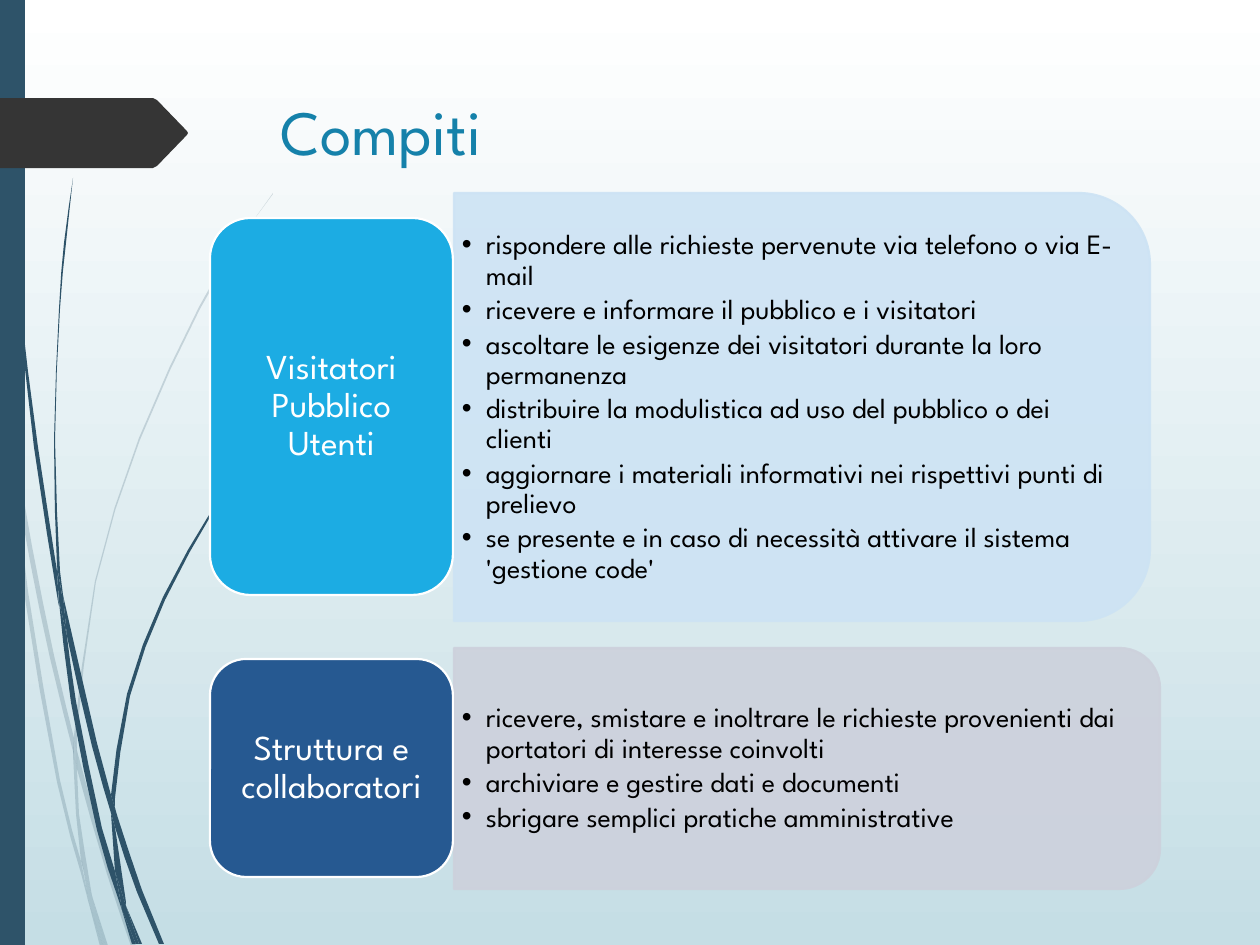
from math import dist

from lxml import etree
from pptx import Presentation
from pptx.dml.color import RGBColor
from pptx.enum.shapes import MSO_SHAPE
from pptx.enum.text import MSO_ANCHOR, PP_ALIGN
from pptx.oxml.ns import qn
from pptx.util import Emu, Pt

PX = 914400 // 126
FONT = "League Spartan"
RECT, CARD, PANEL = (MSO_SHAPE.RECTANGLE, MSO_SHAPE.ROUNDED_RECTANGLE,
                     MSO_SHAPE.ROUND_2_SAME_RECTANGLE)
COLORS = {
    "sky_top": "FFFFFF", "sky_bottom": "C5DEE5", "stem": "2E5369", "tag": "353535",
    "title": "1581AA", "text": "000000", "white": "FFFFFF",
    "visitors": "1CACE3", "visitors_panel": "CDE3F4",
    "staff": "265991", "staff_panel": "CDD1DC",
}

TITLE = "Compiti"
# panel, bullet box and card: left, top, width, height
GROUPS = [
    {
        "color": "visitors", "label": "Visitatori\nPubblico\nUtenti",
        "panel": (454, 193, 696, 428), "list": (453, 214, 674, 387),
        "card": (210, 218, 243, 377),
        "tasks": [
            "rispondere alle richieste pervenute via telefono o via E-mail",
            "ricevere e informare il pubblico e i visitatori",
            "ascoltare le esigenze dei visitatori durante la loro permanenza",
            "distribuire la modulistica ad uso del pubblico o dei clienti",
            "aggiornare i materiali informativi nei rispettivi punti di prelievo",
            "se presente e in caso di necessità attivare il sistema 'gestione code'",
        ],
    },
    {
        "color": "staff", "label": "Struttura e collaboratori",
        "panel": (454, 648, 706, 241), "list": (453, 660, 694, 217),
        "card": (210, 659, 243, 218),
        "tasks": [
            "ricevere, smistare e inoltrare le richieste provenienti dai "
            "portatori di interesse coinvolti",
            "archiviare e gestire dati e documenti",
            "sbrigare semplici pratiche amministrative",
        ],
    },
]

# Pieces of grass: left edge and right edge, each from top to bottom
PALE_STEMS = [
    ([(0, 355), (0, 377), (9, 433), (10, 441)], [(0, 355), (8, 406), (10, 441)]),
    ([(13, 435), (15, 474), (31, 566), (50, 658), (74, 755)],
     [(13, 435), (32, 546), (54, 655), (74, 738)]),
    ([(77, 751), (77, 769), (107, 874), (131, 946)],
     [(77, 751), (81, 765), (111, 872), (136, 946)]),
    ([(92, 896), (105, 946)], [(92, 896), (108, 946)]),
    ([(10, 441), (24, 592), (57, 782), (81, 873), (88, 900)],
     [(10, 441), (15, 474), (28, 591), (60, 780), (81, 861), (87, 891), (88, 900)]),
    ([(73, 755), (76, 814), (81, 861), (84, 872), (92, 896)],
     [(73, 755), (77, 766), (77, 769), (79, 814), (91, 890), (92, 896)]),
    ([(273, 193), (253, 221), (234, 248), (199, 307), (139, 438), (95, 581),
      (74, 736), (74, 738), (77, 751)],
     [(273, 194), (253, 221), (236, 249), (200, 309), (140, 440), (96, 582),
      (77, 736), (77, 751)]),
    ([(88, 900), (100, 946)], [(88, 900), (103, 946)]),
    ([(74, 738), (73, 755), (77, 766)], [(74, 738), (77, 751), (77, 769)]),
    ([(82, 861), (87, 891), (88, 900), (103, 946)],
     [(82, 861), (84, 872), (92, 896), (105, 946)]),
]
DARK_STEMS = [
    ([(3, 0), (4, 60), (6, 139), (18, 294), (34, 447), (58, 601), (59, 606)],
     [(4, 0), (5, 60), (8, 137), (19, 292), (38, 447), (57, 571), (59, 606)]),
    ([(63, 595), (67, 636), (92, 746), (111, 813)],
     [(63, 595), (97, 743), (111, 795), (111, 798)]),
    ([(115, 808), (115, 827), (137, 892), (159, 944)],
     [(115, 808), (118, 818), (142, 890), (164, 944)]),
    ([(59, 601), (71, 702), (97, 830), (116, 892), (122, 910)],
     [(59, 601), (67, 636), (76, 701), (102, 828), (115, 871), (121, 903), (122, 910)]),
    ([(73, 178), (64, 243), (59, 309), (54, 440), (57, 566), (62, 595)],
     [(73, 178), (66, 243), (60, 309), (55, 440), (60, 571), (63, 595)]),
    ([(126, 906), (139, 944)], [(126, 906), (142, 944)]),
    ([(57, 566), (57, 571), (59, 601), (67, 636)],
     [(57, 566), (62, 595), (63, 595), (67, 636)]),
    ([(271, 433), (256, 451), (241, 470), (212, 510), (163, 597), (127, 694),
      (111, 795), (115, 808)],
     [(272, 433), (256, 452), (241, 471), (213, 512), (165, 600), (130, 696),
      (115, 798), (115, 808)]),
    ([(122, 910), (132, 944)], [(122, 910), (136, 944)]),
    ([(111, 813), (115, 871), (121, 890), (126, 906)],
     [(111, 813), (113, 820), (115, 827), (126, 902), (126, 906)]),
    ([(111, 795), (111, 813), (113, 820)], [(111, 795), (115, 808), (115, 827)]),
    ([(115, 871), (121, 903), (122, 910), (136, 944)],
     [(115, 871), (121, 890), (126, 906), (139, 944)]),
]
TAG = [(0, 98), (153, 98), (157, 100), (187, 131), (188, 133), (187, 135),
       (157, 166), (153, 168), (0, 168)]


def rgb(name):
    return RGBColor.from_string(COLORS[name])


def px(*lengths):
    return [Emu(round(length * PX)) for length in lengths]


def paint(shape, fill, line=None, opacity=100):
    shape.shadow.inherit = False
    shape.fill.solid()
    shape.fill.fore_color.rgb = rgb(fill)
    if line:
        shape.line.color.rgb = rgb(line)
        shape.line.width = Pt(1.25)
    else:
        shape.line.fill.background()
    if opacity < 100:
        for color in shape._element.spPr.iter(qn("a:srgbClr")):
            etree.SubElement(color, qn("a:alpha"), val=str(opacity * 1000))


def add_outline(page, points, fill, opacity=100):
    corners = [px(*point) for point in points]
    builder = page.shapes.build_freeform(*corners[0], scale=1.0)
    builder.add_line_segments(corners[1:], close=True)
    paint(builder.convert_to_shape(), fill, opacity=opacity)


def bend(points):
    """Give each long stretch a middle point on a smooth curve."""
    padded = [points[0], *points, points[-1]]
    curve = []
    for a, b, c, d in zip(padded, padded[1:], padded[2:], padded[3:]):
        curve.append(b)
        if dist(b, c) > 60:
            curve.append([(9 * (q + r) - p - s) / 16 for p, q, r, s in zip(a, b, c, d)])
    return curve + [points[-1]]


def set_text(frame, texts, size, color, align, after, insets):
    frame.word_wrap = True
    frame.vertical_anchor = MSO_ANCHOR.MIDDLE
    side, top = px(*insets)
    frame.margin_left = frame.margin_right = side
    frame.margin_top = frame.margin_bottom = top
    for index, text in enumerate(texts):
        para = frame.add_paragraph() if index else frame.paragraphs[0]
        para.text = text
        para.alignment = align
        para.line_spacing = 0.9
        para.space_after = Pt(after)
        para.font.size = Pt(size)
        para.font.name = FONT
        para.font.color.rgb = rgb(color)


def add_bullets(frame, indent=24):
    for para in frame.paragraphs:
        para.level = 1
        properties = para._p.get_or_add_pPr()
        properties.set("marL", str(indent * PX))
        properties.set("indent", str(-indent * PX))
        defaults = properties.find(qn("a:defRPr"))
        defaults.addprevious(etree.Element(qn("a:buFont"), typeface="Arial"))
        defaults.addprevious(etree.Element(qn("a:buChar"), char="•"))


def add_group(page, group):
    color = group["color"]
    left, top, width, height = group["panel"]
    shift = (width - height) / 2  # the panel is a tall shape turned on its side
    panel = page.shapes.add_shape(
        PANEL, *px(left + shift, top - shift, height, width))
    panel.rotation = 90
    paint(panel, color + "_panel", color + "_panel", 90)

    box = page.shapes.add_textbox(*px(*group["list"]))
    set_text(box.text_frame, group["tasks"], 16, "text", PP_ALIGN.LEFT, 2.4, (9, 4))
    add_bullets(box.text_frame)

    paint(page.shapes.add_shape(CARD, *px(*group["card"])), color, "white")
    left, top, width, height = group["card"]
    label = page.shapes.add_textbox(*px(left + 11, top + 11, width - 22, height - 22))
    set_text(label.text_frame, [group["label"]], 20, "white", PP_ALIGN.CENTER, 7, (10, 5))


def main():
    deck = Presentation()
    deck.slide_width, deck.slide_height = px(1260, 945)
    page = deck.slides.add_slide(deck.slide_layouts[6])

    sky = page.background.fill
    sky.gradient()
    sky.gradient_angle = 270
    for stop, name in zip(sky.gradient_stops, ("sky_top", "sky_bottom")):
        stop.color.rgb = rgb(name)

    for stems, opacity in ((PALE_STEMS, 20), (DARK_STEMS, 100)):
        for left, right in stems:
            add_outline(page, bend(left) + bend(right)[::-1], "stem", opacity)
    paint(page.shapes.add_shape(RECT, *px(0, 0, 25, 945)), "stem")
    add_outline(page, TAG, "tag")

    title = page.shapes.add_textbox(*px(268, 86, 908, 176)).text_frame
    title.word_wrap = True
    title.text = TITLE
    font = title.paragraphs[0].font
    font.size, font.name = Pt(36), FONT
    font.color.rgb = rgb("title")

    for group in GROUPS:
        add_group(page, group)
    deck.save("out.pptx")


if __name__ == "__main__":
    main()
